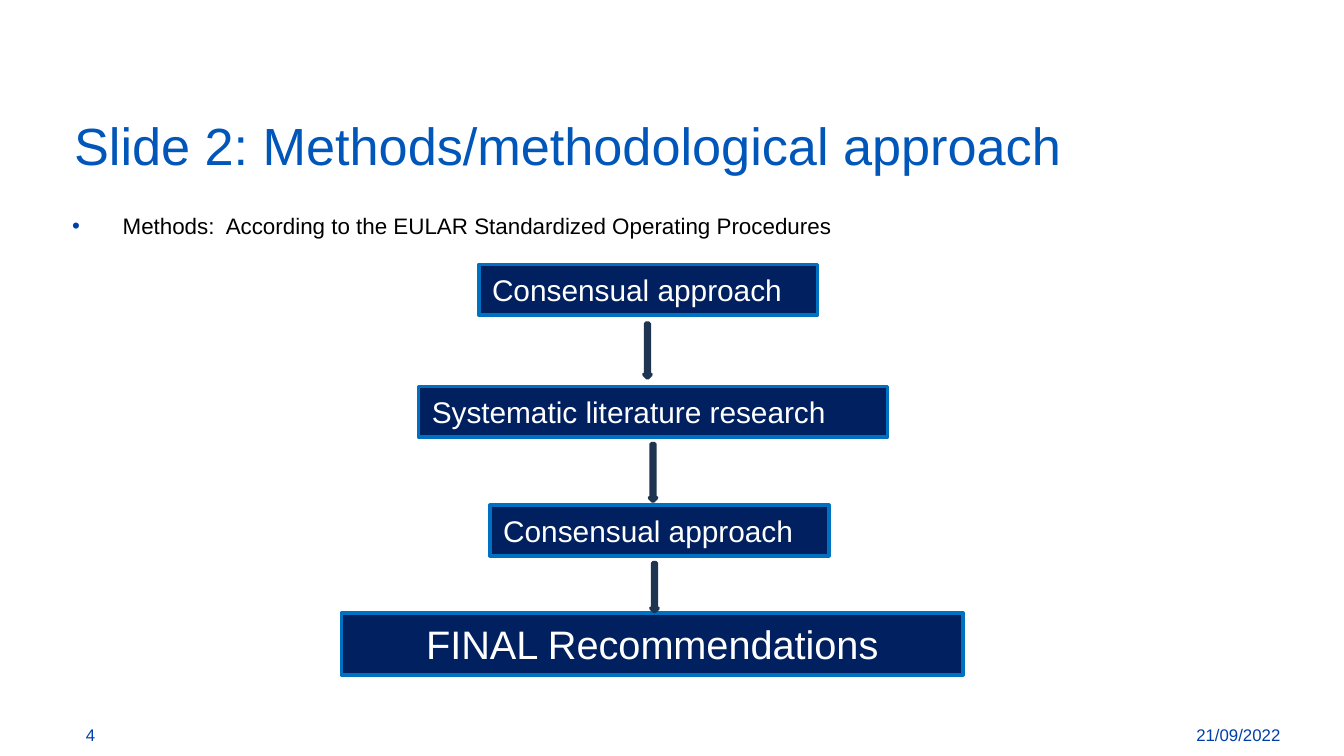
from dataclasses import dataclass
from typing import Any, NamedTuple

from lxml import etree
from pptx import Presentation
from pptx.dml.color import RGBColor
from pptx.enum.shapes import MSO_SHAPE
from pptx.enum.text import MSO_ANCHOR, MSO_AUTO_SIZE, PP_ALIGN
from pptx.oxml.ns import qn
from pptx.util import Emu, Pt

EMU_PER_PX = 9525  # 96 px to the inch
RECTANGLE, DOWN_ARROW = MSO_SHAPE.RECTANGLE, MSO_SHAPE.DOWN_ARROW
TOP, MIDDLE = MSO_ANCHOR.TOP, MSO_ANCHOR.MIDDLE
LEFT, CENTER, RIGHT = PP_ALIGN.LEFT, PP_ALIGN.CENTER, PP_ALIGN.RIGHT
NO_AUTOFIT = MSO_AUTO_SIZE.NONE


@dataclass(frozen=True)
class Theme:
    font: str = "Arial"
    title: str = "0056B9"
    accent: str = "003FA8"
    body: str = "000000"
    step_text: str = "FFFFFF"
    step_fill: str = "002060"
    step_line: str = "0070C0"
    arrow_fill: str = "28476D"
    arrow_line: str = "1E3551"
    line_width: float = 2
    title_size: float = 28
    body_size: float = 12
    footer_size: float = 9
    step_size: float = 16
    final_size: float = 21.3


THEME = Theme()


class Box(NamedTuple):
    left: int
    top: int
    width: int
    height: int


class Step(NamedTuple):
    text: str
    box: Box
    size: float = THEME.step_size
    align: Any = LEFT


class Footer(NamedTuple):
    text: str
    box: Box
    align: Any


STEPS = [
    Step("Consensual approach", Box(342, 189, 242, 36)),
    Step("Systematic literature research", Box(299, 276, 335, 36)),
    Step("Consensual approach", Box(350, 361, 242, 36)),
    Step("FINAL Recommendations", Box(244, 438, 444, 44), THEME.final_size, CENTER),
]
ARROWS = [Box(460, 231, 5, 39), Box(464, 317, 5, 41), Box(465, 402, 5, 35)]
FOOTERS = [
    Footer("21/09/2022", Box(796, 510, 128, 29), RIGHT),
    Footer("4", Box(52, 510, 92, 29), LEFT),
]


def px(length: int) -> Emu:
    return Emu(length * EMU_PER_PX)


def set_all(target: Any, values: dict[str, Any]) -> None:
    for name, value in values.items():
        setattr(target, name, value)


def place(shape: Any, box: Box) -> None:
    set_all(shape, {name: px(length) for name, length in box._asdict().items()})


def write(shape: Any, text: str, size: float, color: str,
          align: Any = LEFT, anchor: Any = MIDDLE) -> Any:
    """Fill the shape with one formatted paragraph and return it."""
    frame = shape.text_frame
    frame.text = text
    set_all(frame, {"word_wrap": True, "auto_size": NO_AUTOFIT, "vertical_anchor": anchor})
    paragraph = frame.paragraphs[0]
    set_all(paragraph, {"alignment": align, "space_before": Pt(0)})
    font = paragraph.runs[0].font
    set_all(font, {"name": THEME.font, "size": Pt(size)})
    font.color.rgb = RGBColor.from_string(color)
    return paragraph


def add_bullet(paragraph: Any, color: str, indent: int) -> None:
    properties = paragraph._p.get_or_add_pPr()
    properties.set("marL", str(px(indent)))
    properties.set("indent", str(px(-indent)))
    bullet_color = etree.SubElement(properties, qn("a:buClr"))
    etree.SubElement(bullet_color, qn("a:srgbClr"), val=color)
    etree.SubElement(properties, qn("a:buFont"), typeface=THEME.font)
    etree.SubElement(properties, qn("a:buChar"), char="•")


def add_shape(slide: Any, kind: Any, box: Box, fill: str, line: str) -> Any:
    shape = slide.shapes.add_shape(kind, *map(px, box))
    shape.shadow.inherit = False
    shape.fill.solid()
    shape.fill.fore_color.rgb = RGBColor.from_string(fill)
    shape.line.color.rgb = RGBColor.from_string(line)
    shape.line.width = Pt(THEME.line_width)
    return shape


def add_step(slide: Any, step: Step) -> None:
    shape = add_shape(slide, RECTANGLE, step.box, THEME.step_fill, THEME.step_line)
    write(shape, step.text, step.size, THEME.step_text, step.align)


def add_footer(slide: Any, footer: Footer) -> None:
    text_box = slide.shapes.add_textbox(*map(px, footer.box))
    write(text_box, footer.text, THEME.footer_size, THEME.accent, footer.align)


def main() -> None:
    presentation = Presentation()
    set_all(presentation, {"slide_width": px(960), "slide_height": px(540)})
    slide = presentation.slides.add_slide(presentation.slide_layouts[1])

    title, body = slide.placeholders
    place(title, Box(49, 76, 875, 50))
    write(title, "Slide 2: Methods/methodological approach",
          THEME.title_size, THEME.title, anchor=TOP)
    title.text_frame.margin_left = px(4)

    place(body, Box(42, 147, 875, 324))
    methods = write(body, "Methods:  According to the EULAR Standardized Operating Procedures",
                    THEME.body_size, THEME.body, anchor=TOP)
    methods.space_after = Pt(12)
    add_bullet(methods, THEME.accent, 36)

    for footer in FOOTERS:
        add_footer(slide, footer)
    for step in STEPS:
        add_step(slide, step)
    for arrow in ARROWS:
        add_shape(slide, DOWN_ARROW, arrow, THEME.arrow_fill, THEME.arrow_line)

    presentation.save("out.pptx")


if __name__ == "__main__":
    main()
